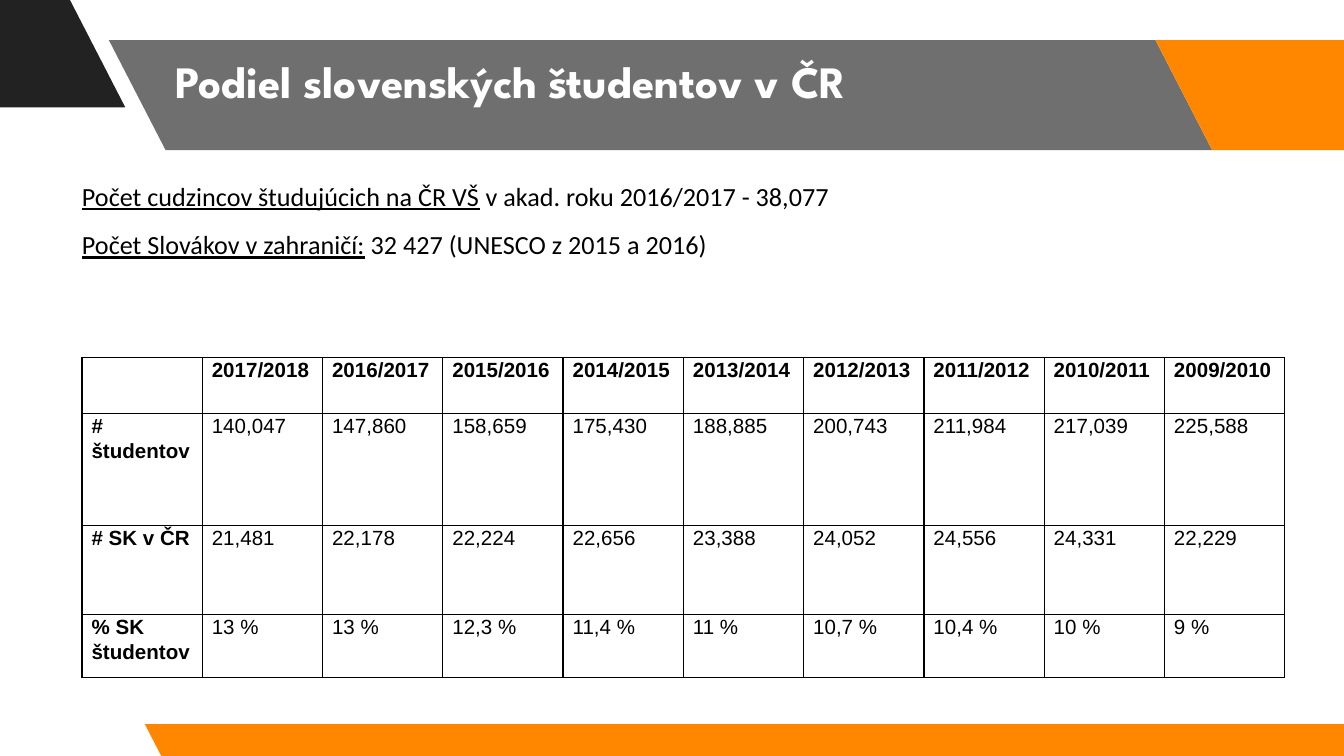
"""Build the slide on the share of Slovak students in the Czech Republic."""
from dataclasses import dataclass

from lxml import etree
from pptx import Presentation
from pptx.dml.color import RGBColor
from pptx.enum.shapes import MSO_SHAPE
from pptx.enum.text import MSO_ANCHOR, MSO_AUTO_SIZE, PP_ALIGN
from pptx.oxml import parse_xml
from pptx.oxml.ns import nsdecls, qn
from pptx.util import Cm, Pt

PARALLELOGRAM = MSO_SHAPE.PARALLELOGRAM
TOP = MSO_ANCHOR.TOP
NO_AUTOFIT = MSO_AUTO_SIZE.NONE
LEFT, JUSTIFY = PP_ALIGN.LEFT, PP_ALIGN.JUSTIFY


@dataclass(frozen=True)
class Theme:
    dark: RGBColor = RGBColor(0x22, 0x22, 0x22)
    orange: RGBColor = RGBColor(0xFF, 0x87, 0x00)
    white: RGBColor = RGBColor(0xFF, 0xFF, 0xFF)
    black: RGBColor = RGBColor(0x00, 0x00, 0x00)
    title_size: Pt = Pt(24)
    body_size: Pt = Pt(14)
    table_size: Pt = Pt(11)


def set_font(font, **values):
    color = values.pop("color")
    for name, value in values.items():
        setattr(font, name, value)
    font.color.rgb = color


def set_paragraph(paragraph, alignment):
    values = {"alignment": alignment, "line_spacing": 1.07, "space_after": Pt(8)}
    for name, value in values.items():
        setattr(paragraph, name, value)


theme = Theme()
prs = Presentation()
prs.slide_width, prs.slide_height = Cm(25.4), Cm(14.29)
slide = prs.slides.add_slide(prs.slide_layouts[5])

bands = [
    (-2.51, -0.05, 4.88, 2.08, theme.dark, 100),
    (2.06, 0.76, 20.85, 2.08, theme.dark, 65),
    (21.84, 0.76, 4.88, 2.08, theme.orange, 100),
    (2.74, 13.69, 23.24, 0.64, theme.orange, 100),
]
for left, top, width, height, color, opacity in bands:
    band = slide.shapes.add_shape(
        PARALLELOGRAM, Cm(left), Cm(top), Cm(width), Cm(height))
    band.adjustments[0] = 0.515
    band.element.spPr.xfrm.set("flipH", "1")
    band.shadow.inherit = False
    band.fill.solid()
    band.fill.fore_color.rgb = color
    band.line.fill.background()
    if opacity < 100:
        tint = band.element.spPr.find(".//" + qn("a:srgbClr"))
        etree.SubElement(tint, qn("a:alpha"), val=str(opacity * 1000))

heading = slide.shapes.title
slide.shapes.element.append(heading.element)
heading_place = {"left": 3.07, "top": 0.76, "width": 18.67, "height": 2.08}
for name, value in heading_place.items():
    setattr(heading, name, Cm(value))
heading_frame = heading.text_frame
heading_frame.text = "Podiel slovenských študentov v ČR"
heading_format = {
    "auto_size": NO_AUTOFIT, "vertical_anchor": TOP, "word_wrap": True,
    "margin_left": Cm(0.25), "margin_right": Cm(0.25),
    "margin_top": Cm(0.25), "margin_bottom": Cm(0.25),
}
for name, value in heading_format.items():
    setattr(heading_frame, name, value)
heading_line = heading_frame.paragraphs[0]
heading_line.alignment = LEFT
set_font(heading_line.runs[0].font, name="League Spartan",
         size=theme.title_size, bold=True, color=theme.white)

years = [f"{year}/{year + 1}" for year in range(2017, 2008, -1)]
rows = [
    ["", *years],
    ["# študentov", "140,047", "147,860", "158,659", "175,430", "188,885",
     "200,743", "211,984", "217,039", "225,588"],
    ["# SK v ČR", "21,481", "22,178", "22,224", "22,656", "23,388",
     "24,052", "24,556", "24,331", "22,229"],
    ["% SK študentov", "13 %", "13 %", "12,3 %", "11,4 %", "11 %",
     "10,7 %", "10,4 %", "10 %", "9 %"],
]
row_heights = [1.06, 2.11, 1.69, 1.18]
table_width = 22.73
students = slide.shapes.add_table(
    len(rows), len(rows[0]), Cm(1.55), Cm(6.76),
    Cm(table_width), Cm(sum(row_heights))).table
students.first_row = students.horz_banding = False
for column in students.columns:
    column.width = Cm(table_width / len(rows[0]))

cell_margins = {"margin_left": Cm(0.18), "margin_right": Cm(0.18),
                "margin_top": 0, "margin_bottom": 0}
for row_index, (values, height) in enumerate(zip(rows, row_heights)):
    students.rows[row_index].height = Cm(height)
    for column_index, value in enumerate(values):
        cell = students.cell(row_index, column_index)
        for name, margin in cell_margins.items():
            setattr(cell, name, margin)
        for side in ("lnL", "lnR", "lnT", "lnB"):
            cell._tc.get_or_add_tcPr().append(parse_xml(
                f'<a:{side} {nsdecls("a")} w="{Pt(0.75)}"><a:solidFill>'
                f'<a:srgbClr val="{theme.black}"/></a:solidFill></a:{side}>'))
        cell.fill.background()
        entry = cell.text_frame.paragraphs[0]
        set_paragraph(entry, LEFT if value == "% SK študentov" else JUSTIFY)
        entry.text = value
        set_font(entry.font, name="Arial", size=theme.table_size,
                 bold=row_index == 0 or column_index == 0, color=theme.black)
        for run in entry.runs:
            set_font(run.font, name="Arial", size=theme.table_size,
                     bold=row_index == 0 or column_index == 0, color=theme.black)

facts = [
    ("Počet cudzincov študujúcich na ČR VŠ",
     " v akad. roku 2016/2017 - 38,077"),
    ("Počet Slovákov v zahraničí:", " 32 427 (UNESCO z 2015 a 2016)"),
]
summary = slide.shapes.add_textbox(
    Cm(1.3), Cm(3.24), Cm(18.08), Cm(2.58)).text_frame
summary.word_wrap = True
for index, fact in enumerate(facts):
    line = summary.add_paragraph() if index else summary.paragraphs[0]
    set_paragraph(line, LEFT)
    for text, underline in zip(fact, (True, False)):
        run = line.add_run()
        run.text = text
        set_font(run.font, name="Calibri", size=theme.body_size,
                 underline=underline, color=theme.black)

prs.save("out.pptx")
